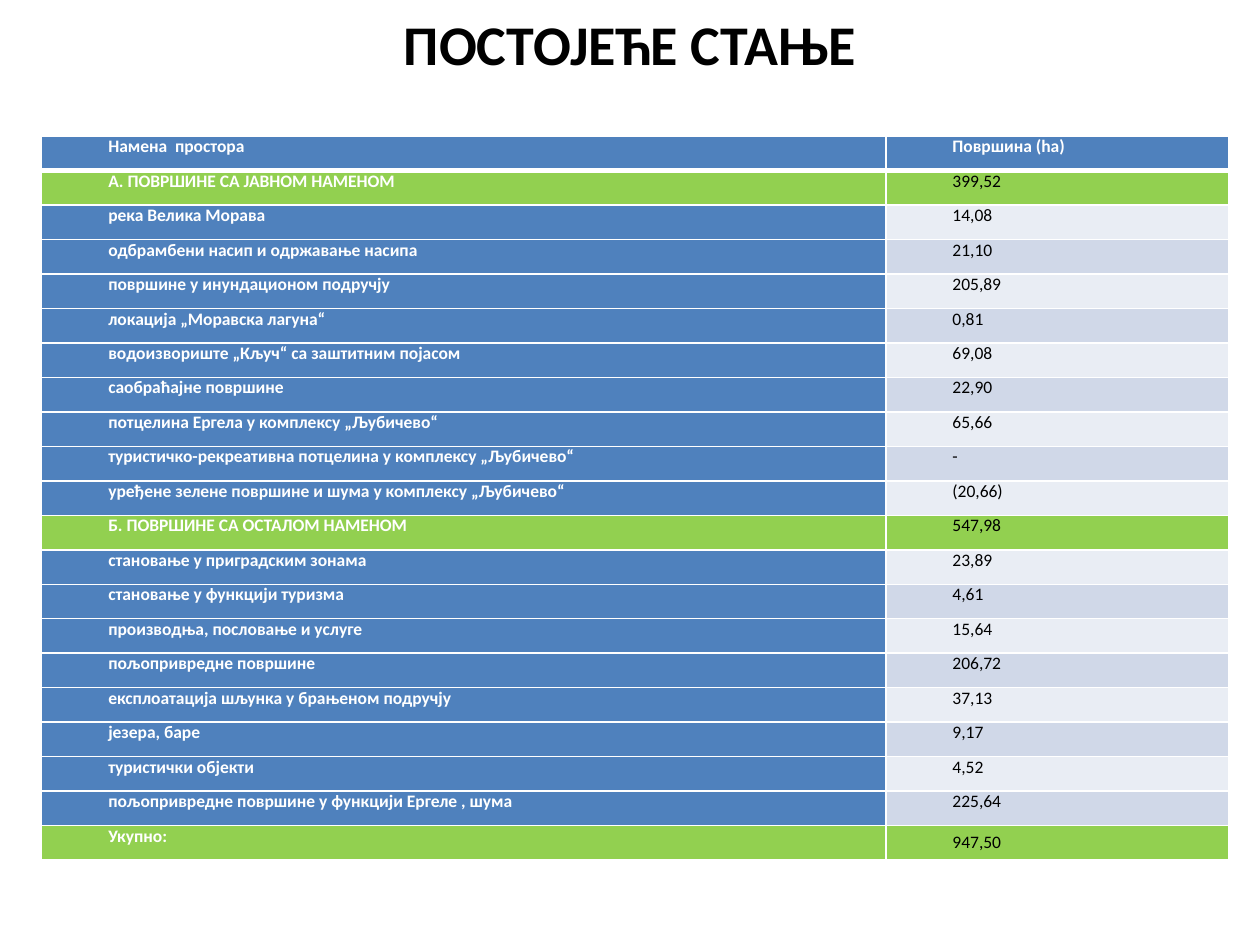
from lxml import etree
from pptx import Presentation, util as u
from pptx.dml.color import RGBColor
from pptx.enum import text
from pptx.oxml.ns import qn

# Content
TITLE = "ПОСТОЈЕЋЕ СТАЊЕ"
HEADER = ("Намена  простора", "Површина (ha)")
GROUPS = [
    (("А. ПОВРШИНЕ СА ЈАВНОМ НАМЕНОМ", "399,52"), [
        ("река Велика Морава", "14,08"),
        ("одбрамбени насип и одржавање насипа", "21,10"),
        ("површине у инундационом подручју", "205,89"),
        ("локација „Моравска лагуна“", "0,81"),
        ("водоизвориште „Кључ“ са заштитним појасом", "69,08"),
        ("саобраћајне површине", "22,90"),
        ("потцелина Ергелa у комплексу „Љубичево“", "65,66"),
        ("туристичко-рекреативна потцелина у комплексу „Љубичево“", "-"),
        ("уређене зелене површине и шума у комплексу „Љубичево“", "(20,66)"),
    ]),
    (("Б. ПОВРШИНЕ СА ОСТАЛОМ НАМЕНОМ", "547,98"), [
        ("становање у приградским зонама", "23,89"),
        ("становање у функцији туризма", "4,61"),
        ("производња, пословање и услуге", "15,64"),
        ("пољопривредне површине", "206,72"),
        ("експлоатација шљунка у брањеном подручју", "37,13"),
        ("језера, баре", "9,17"),
        ("туристички објекти", "4,52"),
        ("пољопривредне површине у функцији Ергеле , шума", "225,64"),
    ]),
    (("Укупно:", "947,50"), []),
]

THEME = {
    "font": "Calibri", "title_size": 32, "cell_size": 10,
    "white": "FFFFFF", "black": "000000",
    "blue": "4F81BD", "green": "92D050", "bands": ("E9EDF4", "D0D8E8"),
}

# Layout
TABLE_LEFT, TABLE_TOP, TABLE_HEIGHT = 0.33, 1.08, 5.75
COLUMN_WIDTHS = (6.7, 2.72)
FIRST_LINE_INDENT = 0.46


def style_font(font, size, color, bold):
    font.name = THEME["font"]
    font.size = u.Pt(size)
    font.bold = bold
    font.color.rgb = RGBColor.from_string(color)


def set_borders(cell, top, bottom):
    properties = cell._tc.get_or_add_tcPr()
    for side, width in (("L", 1), ("R", 1), ("T", top), ("B", bottom)):
        line = etree.SubElement(properties, qn(f"a:ln{side}"), w=str(u.Pt(width)))
        fill = etree.SubElement(line, qn("a:solidFill"))
        etree.SubElement(fill, qn("a:srgbClr"), val=THEME["white"])


def fill_cell(cell, wording, fill, color, bold):
    cell.margin_left = cell.margin_right = u.Inches(0.07)
    cell.margin_top = cell.margin_bottom = 0
    cell.fill.solid()
    cell.fill.fore_color.rgb = RGBColor.from_string(fill)
    cell.text = wording
    paragraph = cell.text_frame.paragraphs[0]
    paragraph.alignment = text.PP_ALIGN.JUSTIFY
    paragraph.space_after = u.Pt(6)
    paragraph._p.get_or_add_pPr().set("indent", str(u.Inches(FIRST_LINE_INDENT)))
    style_font(paragraph.font, THEME["cell_size"], color, bold)


def add_title(slide):
    box = slide.shapes.add_textbox(u.Inches(0.5), u.Inches(0.08), u.Inches(9), u.Inches(0.53))
    frame = box.text_frame
    frame.word_wrap = True
    frame.vertical_anchor = text.MSO_ANCHOR.MIDDLE
    paragraph = frame.paragraphs[0]
    paragraph.text = TITLE
    paragraph.alignment = text.PP_ALIGN.CENTER
    style_font(paragraph.font, THEME["title_size"], THEME["black"], True)


def add_area_table(slide):
    rows = [(HEADER, "header")]
    for heading, items in GROUPS:
        rows.append((heading, "group"))
        rows += [(item, "item") for item in items]

    table = slide.shapes.add_table(
        len(rows), len(COLUMN_WIDTHS), u.Inches(TABLE_LEFT), u.Inches(TABLE_TOP),
        u.Inches(sum(COLUMN_WIDTHS)), u.Inches(TABLE_HEIGHT)).table
    for column, width in zip(table.columns, COLUMN_WIDTHS):
        column.width = u.Inches(width)

    for index, ((name, area), kind) in enumerate(rows):
        name_fill = THEME["green"] if kind == "group" else THEME["blue"]
        area_fill = THEME["bands"][index % 2] if kind == "item" else name_fill
        is_header = kind == "header"
        area_color = THEME["white"] if is_header else THEME["black"]
        name_cell, area_cell = table.cell(index, 0), table.cell(index, 1)
        # The header is set off by a thicker rule
        for cell in (name_cell, area_cell):
            set_borders(cell, top=3 if index == 1 else 1, bottom=3 if is_header else 1)
        fill_cell(name_cell, name, name_fill, THEME["white"], True)
        fill_cell(area_cell, area, area_fill, area_color, is_header)

    # The grand total sits in the middle of its row
    table.cell(len(rows) - 1, 1).vertical_anchor = text.MSO_ANCHOR.MIDDLE


def main():
    presentation = Presentation()
    presentation.slide_width = u.Inches(10)
    presentation.slide_height = u.Inches(7.5)
    slide = presentation.slides.add_slide(presentation.slide_layouts[6])
    add_area_table(slide)
    add_title(slide)
    presentation.save("out.pptx")


if __name__ == "__main__":
    main()
